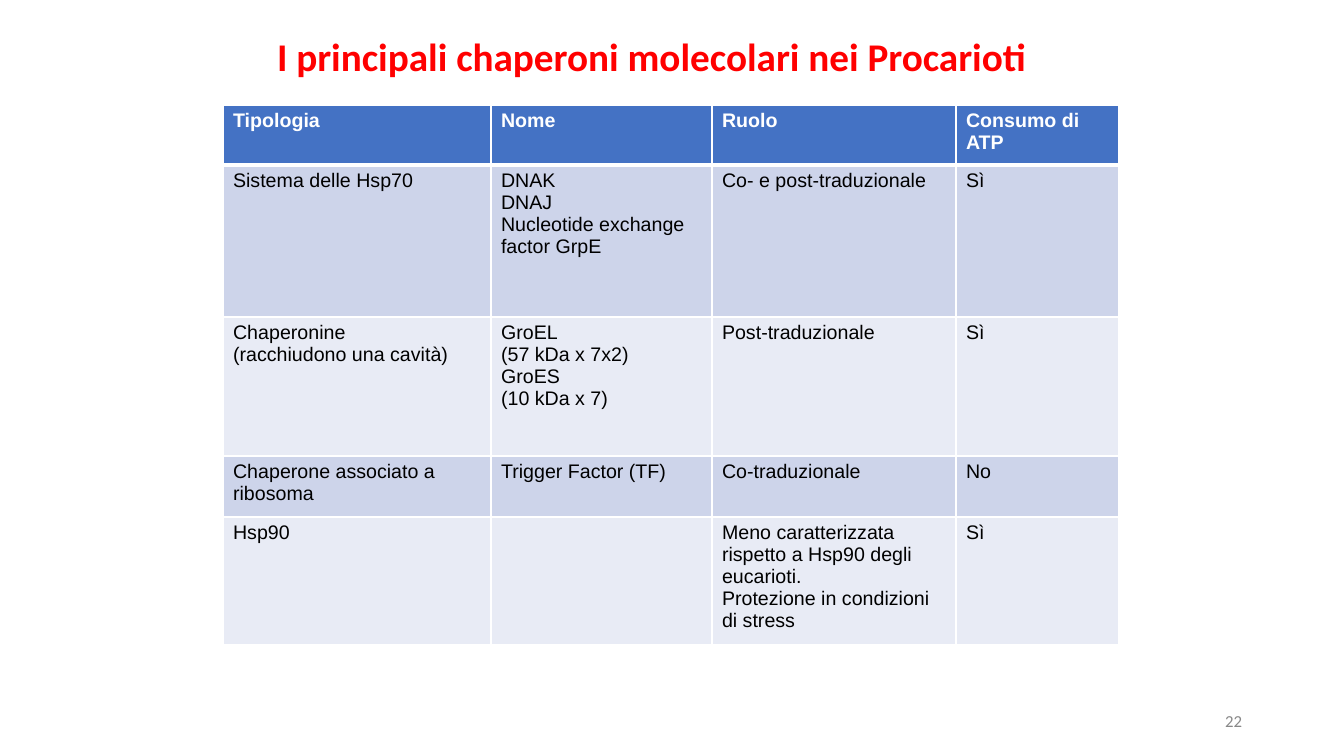
from lxml import etree
from pptx import Presentation
from pptx import util as u
from pptx.dml.color import RGBColor
from pptx.enum import text
from pptx.oxml import ns

PX = 914400 / 100.8
COLS = [268, 221, 244, 163]
ROWS = [60, 152, 139, 61, 128]
CELLS = [
    ["Tipologia", "Nome", "Ruolo", "Consumo di ATP"],
    ["Sistema delle Hsp70", "DNAK\nDNAJ\nNucleotide exchange factor GrpE",
     "Co- e post-traduzionale", "Sì"],
    ["Chaperonine\n(racchiudono una cavità)",
     "GroEL\n(57 kDa x 7x2)\nGroES\n(10 kDa x 7)", "Post-traduzionale", "Sì"],
    ["Chaperone associato a ribosoma", "Trigger Factor (TF)",
     "Co-traduzionale", "No"],
    ["Hsp90", "", "Meno caratterizzata rispetto a Hsp90 degli eucarioti.\n"
     "Protezione in condizioni di stress", "Sì"],
]


def px(n):
    return u.Emu(round(n * PX))


def rgb(code):
    return RGBColor.from_string(code)


def style(frame, face, size, color, bold=False, align=text.PP_ALIGN.LEFT):
    for par in frame.paragraphs:
        par.alignment = align
        for run in par.runs:
            font = run.font
            font.name, font.size, font.bold = face, u.Pt(size), bold
            font.color.rgb = rgb(color)


def place(shape, box):
    shape.left, shape.top, shape.width, shape.height = map(px, box)


# Cell borders: white, one width in points for each side
def border(cell, **sides):
    props = cell._tc.get_or_add_tcPr()
    for side, width in sides.items():
        line = etree.SubElement(props, ns.qn("a:ln" + side), w=str(u.Pt(width)))
        fill = etree.SubElement(line, ns.qn("a:solidFill"))
        etree.SubElement(fill, ns.qn("a:srgbClr"), val="FFFFFF")


# Heading
def title(slide, box):
    head = slide.shapes.title
    place(head, box)
    frame = head.text_frame
    frame.text = "I principali chaperoni molecolari nei Procarioti"
    frame.auto_size = text.MSO_AUTO_SIZE.NONE
    frame.vertical_anchor = text.MSO_ANCHOR.TOP
    style(frame, "Calibri", 28, "FF0000", bold=True)


# Table of chaperones
def grid(slide, left, top):
    box = map(px, (left, top, sum(COLS), sum(ROWS)))
    table = slide.shapes.add_table(len(ROWS), len(COLS), *box).table
    for col, width in zip(table.columns, COLS):
        col.width = px(width)
    for r, (row, height) in enumerate(zip(table.rows, ROWS)):
        row.height = px(height)
        first = r == 0
        shade = "4472C4" if first else ("E8EBF5", "CDD4EA")[r % 2]
        for cell, words in zip(row.cells, CELLS[r]):
            border(cell, L=1, R=1, T=3 if r == 1 else 1, B=3 if first else 1)
            cell.fill.solid()
            cell.fill.fore_color.rgb = rgb(shade)
            cell.text_frame.text = words
            style(cell.text_frame, "Arial", 14,
                  "FFFFFF" if first else "000000", bold=first)


# Page number
def number(slide, box):
    frame = slide.shapes.add_textbox(*map(px, box)).text_frame
    frame.word_wrap = True
    frame.vertical_anchor = text.MSO_ANCHOR.MIDDLE
    frame.text = "22"
    style(frame, "Calibri", 12, "888888", align=text.PP_ALIGN.RIGHT)


def main():
    deck = Presentation()
    deck.slide_width, deck.slide_height = px(1344), px(756)
    slide = deck.slides.add_slide(deck.slide_layouts[5])
    title(slide, (267, 27, 778, 89))
    grid(slide, 223, 105)
    number(slide, (950, 701, 302, 40))
    deck.save("out.pptx")


if __name__ == "__main__":
    main()
